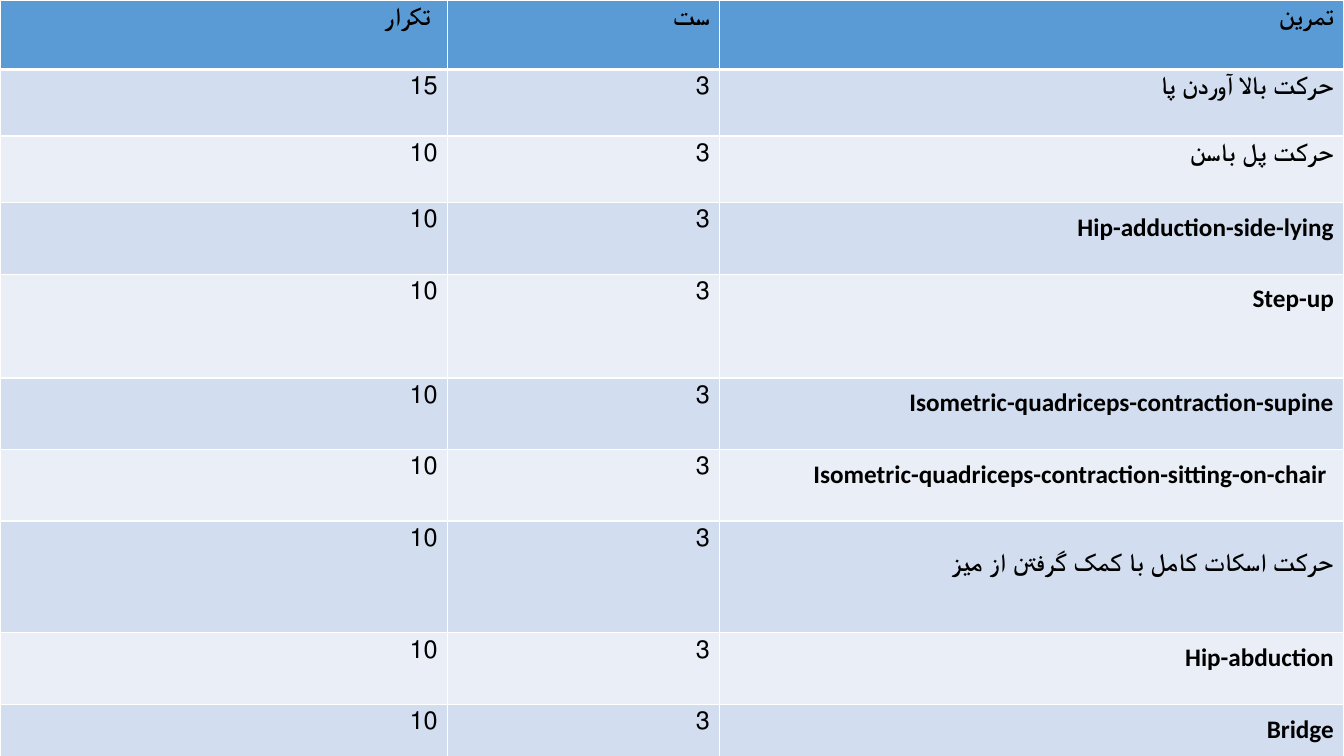
from pptx import Presentation
from pptx.dml.color import RGBColor
from pptx.enum.text import PP_ALIGN
from pptx.oxml.ns import qn
from pptx.util import Inches, Pt
from lxml.etree import SubElement

# Content: repetitions, sets, exercise
HEAD = (" تکرار", "ست", "تمرین")
MOVES = [
    ("15", "3", "حرکت بالا آوردن پا"),
    ("10", "3", "حرکت پل باسن "),
    ("10", "3", "Hip-adduction-side-lying"),
    ("10", "3", "Step-up"),
    ("10", "3", "Isometric-quadriceps-contraction-supine"),
    ("10", "3", " Isometric-quadriceps-contraction-sitting-on-chair"),
    ("10", "3", "حرکت اسکات کامل با کمک گرفتن از میز"),
    ("10", "3", "Hip-abduction"),
    ("10", "3", "Bridge"),
]
COLS = (4.44, 2.7, 6.19)
ROWS = (0.69, 0.66, 0.66, 0.71, 1.03, 0.71, 0.71, 1.11, 0.71, 0.71)
LOW_ROW = 7  # the squat sits one line lower
NAME_COL = 2

BLUE = RGBColor(0x5B, 0x9B, 0xD5)
BANDS = (RGBColor(0xEA, 0xEF, 0xF7), RGBColor(0xD2, 0xDE, 0xEF))
WHITE = RGBColor(0xFF, 0xFF, 0xFF)
BLACK = RGBColor(0, 0, 0)


def edge(cell, side, width):
    line = SubElement(cell._tc.get_or_add_tcPr(), qn("a:" + side), w=str(Pt(width)))
    fill = SubElement(line, qn("a:solidFill"))
    SubElement(fill, qn("a:srgbClr"), val=str(WHITE))


def write(cell, text, bold):
    para = cell.text_frame.paragraphs[0]
    para.alignment = PP_ALIGN.RIGHT
    para._p.get_or_add_pPr().set("rtl", "1")
    if text.strip()[0].isascii() and bold:
        para.line_spacing = 1.15
    run = para.add_run()
    run.text = text
    font = run.font
    font.name, font.size, font.bold = "Calibri", Pt(18), bold
    font.color.rgb = BLACK


def main():
    deck = Presentation()
    deck.slide_width, deck.slide_height = Inches(13.33), Inches(7.5)
    slide = deck.slides.add_slide(deck.slide_layouts[6])

    # Table grid
    frame = slide.shapes.add_table(len(ROWS), len(COLS), 0, 0,
                                   Inches(sum(COLS)), Inches(sum(ROWS)))
    table = frame.table
    for col, width in zip(table.columns, COLS):
        col.width = Inches(width)
    for row, height in zip(table.rows, ROWS):
        row.height = Inches(height)

    # Cells: borders come before the fill
    for r, texts in enumerate([HEAD] + MOVES):
        for c, text in enumerate(texts):
            cell = table.cell(r, c)
            for side in ("lnL", "lnR", "lnT", "lnB"):
                thick = (r, side) in ((0, "lnB"), (1, "lnT"))
                edge(cell, side, 3 if thick else 1)
            cell.fill.solid()
            cell.fill.fore_color.rgb = BANDS[r % 2] if r else BLUE
            if (r, c) == (LOW_ROW, NAME_COL):
                cell.margin_top = Inches(0.3)
            write(cell, text, r == 0 or c == NAME_COL)

    deck.save("out.pptx")


if __name__ == "__main__":
    main()
